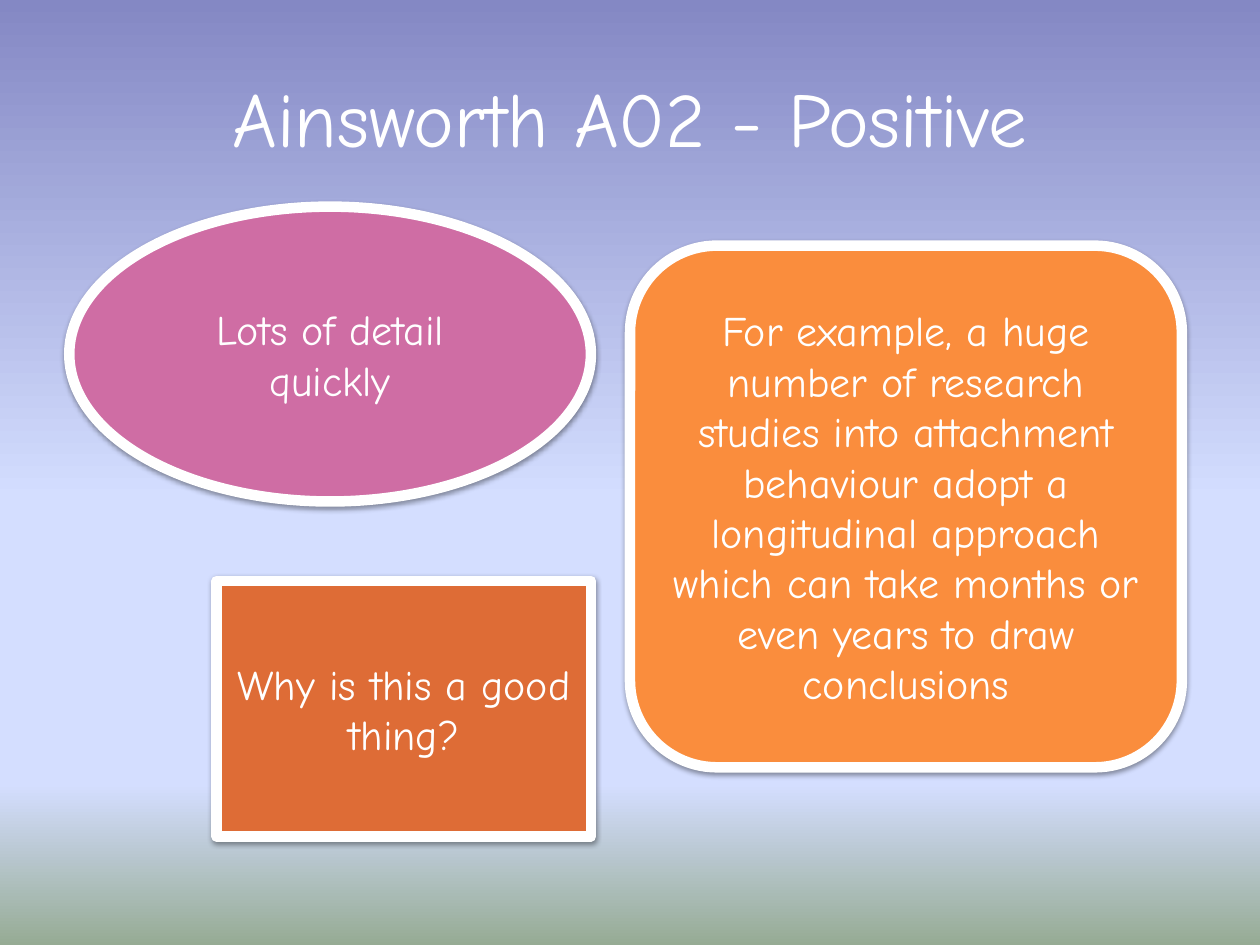
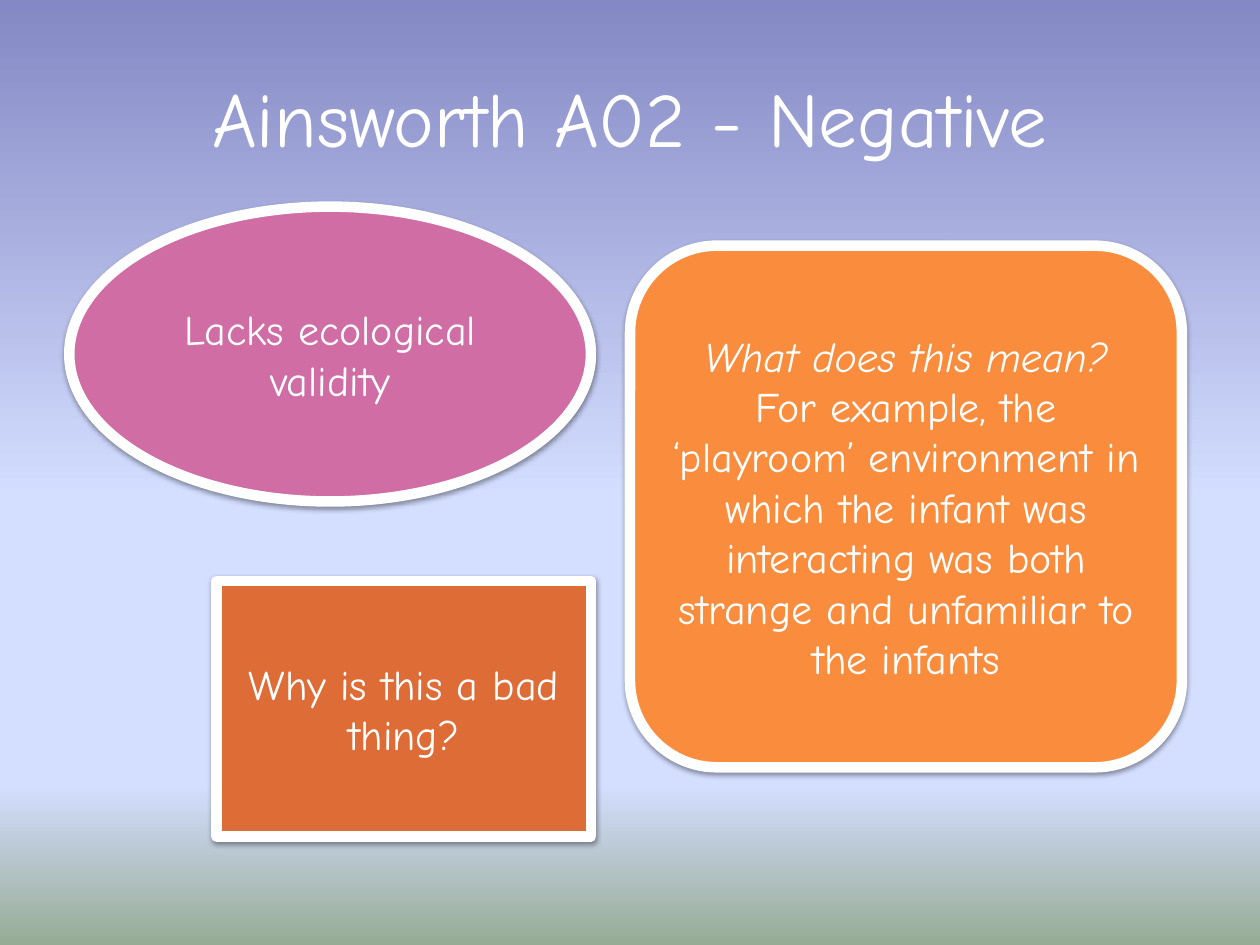
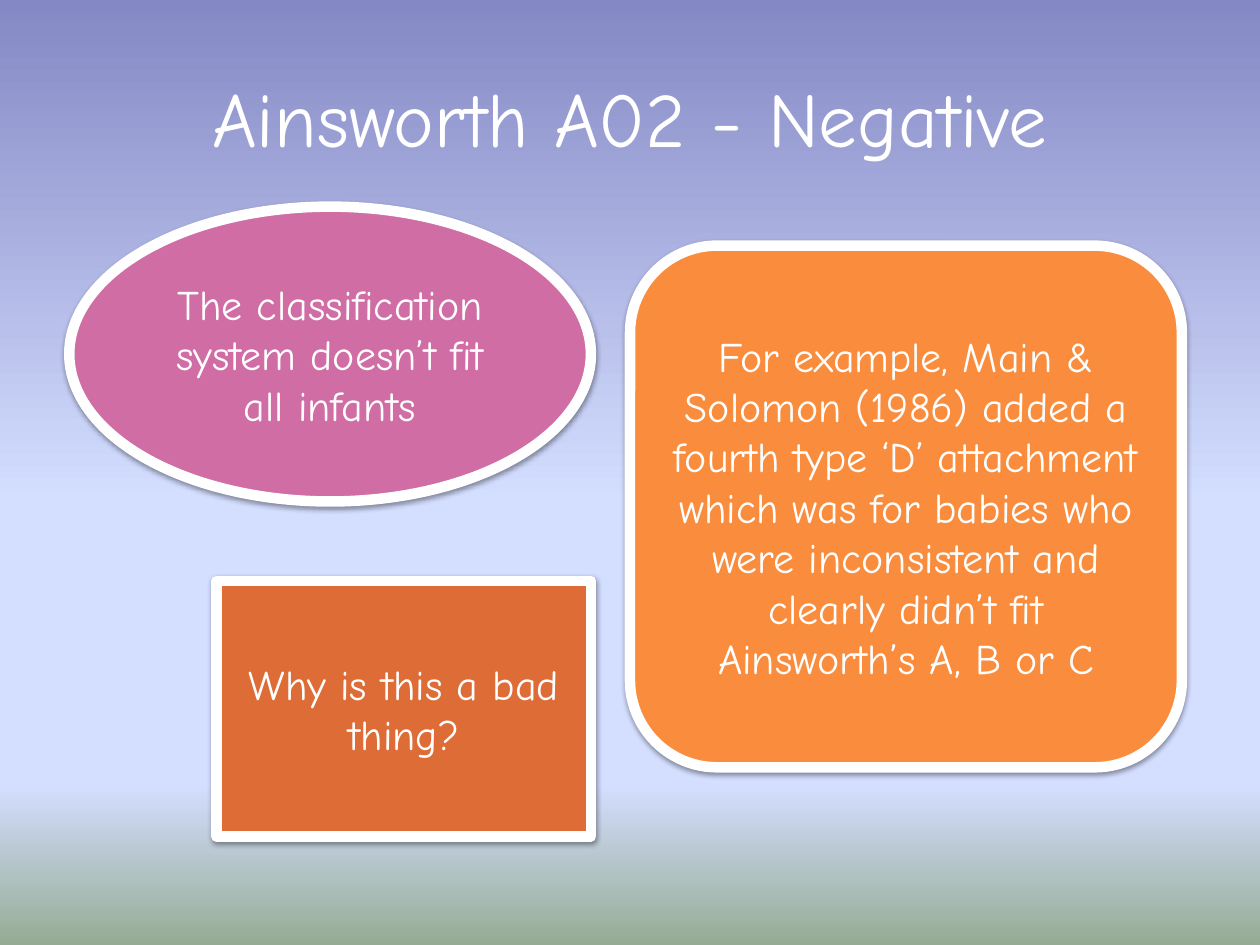
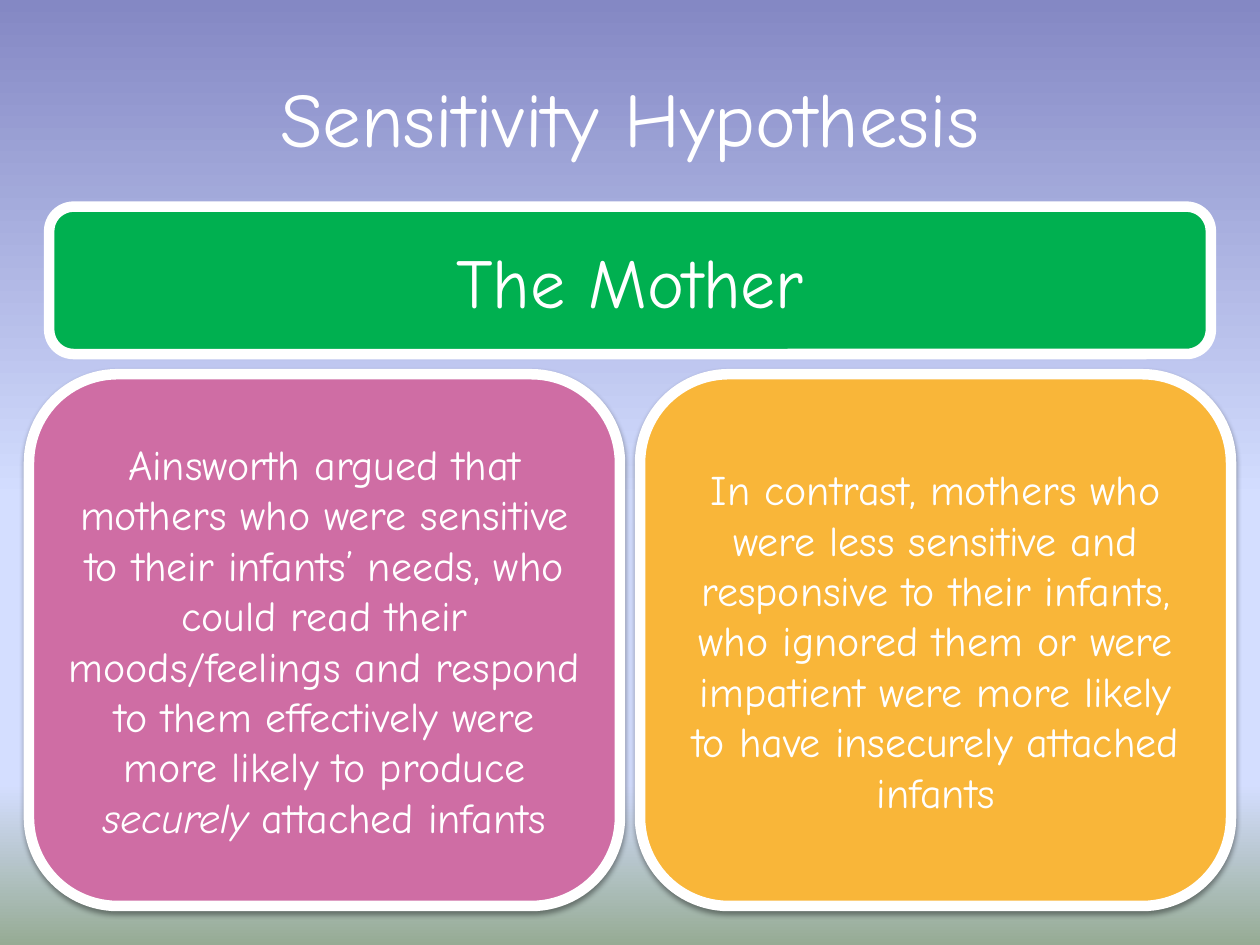
from dataclasses import dataclass

from lxml import etree
from pptx import Presentation
from pptx.dml.color import RGBColor
from pptx.enum.shapes import MSO_SHAPE
from pptx.enum.text import MSO_ANCHOR, PP_ALIGN
from pptx.oxml.ns import qn
from pptx.util import Inches, Pt

ELLIPSE = MSO_SHAPE.OVAL
RECTANGLE = MSO_SHAPE.RECTANGLE
ROUNDED = MSO_SHAPE.ROUNDED_RECTANGLE
CENTER = PP_ALIGN.CENTER
MIDDLE = MSO_ANCHOR.MIDDLE
TITLE_ONLY = 5


@dataclass(frozen=True)
class Theme:
    font: str = "Comic Neue"
    white: str = "FFFFFF"
    pink: str = "CF6DA4"
    orange: str = "FA8D3D"
    rust: str = "DE6C36"
    amber: str = "F9B639"
    green: str = "00B050"
    shadow: str = "000000"
    sky: tuple = ((0, "8488C4"), (53, "D4DEFF"), (83, "D4DEFF"), (100, "96AB94"))
    title_size: int = 44
    heading_size: int = 40
    body_size: int = 24
    outline: int = 6


THEME = Theme()

EVALUATIONS = [
    ("Ainsworth A02 - Positive",
     "Lots of detail quickly",
     "For example, a huge number of research studies into attachment behaviour "
     "adopt a longitudinal approach which can take months or even years to draw "
     "conclusions",
     "Why is this a good thing?"),
    ("Ainsworth A02 - Negative",
     "Lacks ecological validity",
     "*What does this mean?*\n"
     "For example, the ‘playroom’ environment in which the infant was interacting "
     "was both strange and unfamiliar to the infants",
     "Why is this a bad thing?"),
    ("Ainsworth A02 - Negative",
     "The classification system doesn’t fit all infants",
     "For example, Main & Solomon (1986) added a fourth type ‘D’ attachment which "
     "was for babies who were inconsistent and clearly didn’t fit Ainsworth’s A, B "
     "or C",
     "Why is this a bad thing?"),
]

SENSITIVE_MOTHERS = (
    "Ainsworth argued that mothers who were sensitive to their infants’ needs, who "
    "could read their moods/feelings and respond to them effectively were more "
    "likely to produce *securely* attached infants")
LESS_SENSITIVE_MOTHERS = (
    "In contrast, mothers who were less sensitive and responsive to their infants, "
    "who ignored them or were impatient were more likely to have insecurely "
    "attached infants")


def add_color(parent, color):
    return etree.SubElement(parent, qn("a:srgbClr"), val=color)


def paint_background(master):
    """Give every slide the vertical sky gradient through the master."""
    fill = master.background.fill
    fill.gradient()
    fill.gradient_angle = 270
    stops = master.element.xpath(".//p:bg//a:gsLst")[0]
    for stop in list(stops):
        stops.remove(stop)
    for percent, color in THEME.sky:
        stop = etree.SubElement(stops, qn("a:gs"), pos=str(percent * 1000))
        add_color(stop, color)


def write_text(frame, text, size, color=THEME.white):
    """Write one paragraph per line; words between asterisks are italic."""
    frame.word_wrap = True
    frame.vertical_anchor = MIDDLE
    for number, line in enumerate(text.split("\n")):
        para = frame.add_paragraph() if number else frame.paragraphs[0]
        para.alignment = CENTER
        for index, words in enumerate(line.split("*")):
            if not words:
                continue
            span = para.add_run()
            span.text = words
            span.font.name = THEME.font
            span.font.size = Pt(size)
            span.font.italic = index % 2 == 1
            span.font.color.rgb = RGBColor.from_string(color)


def add_shadow(box):
    effects = box.element.spPr.find(qn("a:effectLst"))
    shadow = etree.SubElement(
        effects, qn("a:outerShdw"), blurRad=str(Pt(3.1)), dist=str(Pt(1.6)),
        dir=str(90 * 60000), rotWithShape="0")
    etree.SubElement(add_color(shadow, THEME.shadow), qn("a:alpha"), val="38000")


def add_box(page, kind, place, text, fill, size=THEME.body_size, shadow=True):
    box = page.shapes.add_shape(kind, *map(Inches, place))
    box.fill.solid()
    box.fill.fore_color.rgb = RGBColor.from_string(fill)
    box.line.color.rgb = RGBColor.from_string(THEME.white)
    box.line.width = Pt(THEME.outline)
    box.shadow.inherit = False
    if shadow:
        add_shadow(box)
    write_text(box.text_frame, text, size)


def add_page(deck, title):
    page = deck.slides.add_slide(deck.slide_layouts[TITLE_ONLY])
    heading = page.shapes.title
    heading.left, heading.top, heading.width, heading.height = map(
        Inches, (0.5, 0.3, 9, 1.25))
    write_text(heading.text_frame, title, THEME.title_size)
    return page


def add_evaluation_page(deck, title, point, example, question):
    page = add_page(deck, title)
    add_box(page, ELLIPSE, (0.55, 1.64, 4.14, 2.34), point, THEME.pink)
    add_box(page, ROUNDED, (5, 1.95, 4.38, 4.14), example, THEME.orange)
    add_box(page, RECTANGLE, (1.72, 4.61, 2.97, 2.03), question, THEME.rust)


def add_hypothesis_page(deck):
    page = add_page(deck, "Sensitivity Hypothesis")
    add_box(page, ROUNDED, (0.39, 1.64, 9.22, 1.17), "The Mother", THEME.green,
            size=THEME.heading_size, shadow=False)
    columns = [(0.23, SENSITIVE_MOTHERS, THEME.pink),
               (5.08, LESS_SENSITIVE_MOTHERS, THEME.amber)]
    for left, text, fill in columns:
        add_box(page, ROUNDED, (left, 2.97, 4.69, 4.22), text, fill)


def main():
    deck = Presentation()
    deck.slide_width, deck.slide_height = Inches(10), Inches(7.5)
    paint_background(deck.slide_master)
    for evaluation in EVALUATIONS:
        add_evaluation_page(deck, *evaluation)
    add_hypothesis_page(deck)
    deck.save("out.pptx")


if __name__ == "__main__":
    main()
